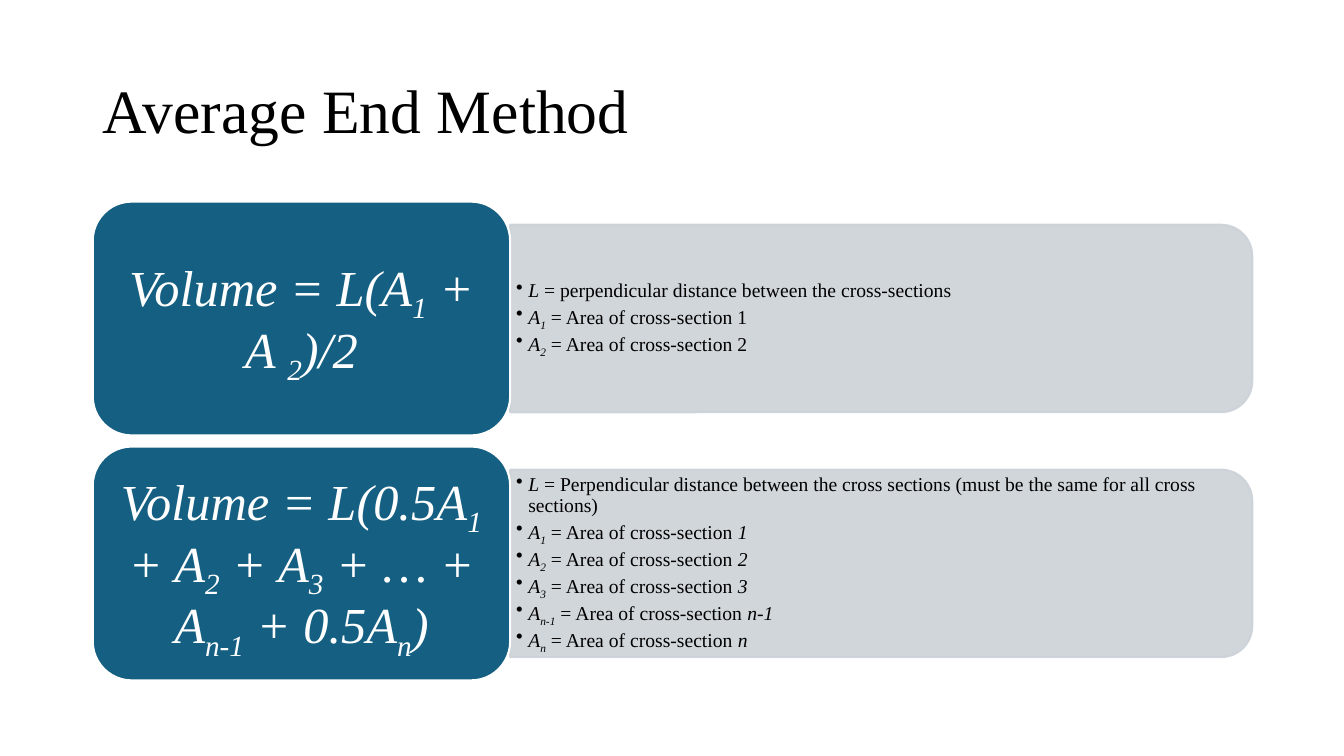
from lxml.etree import SubElement
from pptx import Presentation
from pptx.dml.color import RGBColor
from pptx.enum.shapes import MSO_SHAPE
from pptx.enum.text import MSO_ANCHOR, MSO_AUTO_SIZE, PP_ALIGN
from pptx.oxml.ns import qn
from pptx.util import Inches, Pt

COLORS = {"text": "000000", "card": "156082", "panel": "CCD2D8", "white": "FFFFFF"}
FONT = "Times New Roman"

# Each row: formula, then (symbol, meaning, italic ending); _..._ marks a subscript
AREA = " = Area of cross-section "
ROWS = [
    ("Volume = L(A_1_ + A _2_)/2",
     [("L", " = perpendicular distance between the cross-sections", ""),
      ("A_1_", AREA + "1", ""),
      ("A_2_", AREA + "2", "")]),
    ("Volume = L(0.5A_1_ + A_2_ + A_3_ + … + A_n-1_ + 0.5A_n_)",
     [("L", " = Perpendicular distance between the cross sections "
            "(must be the same for all cross sections)", "")]
     + [(f"A_{n}_", AREA, n) for n in ("1", "2", "3", "n-1", "n")]),
]

# Row geometry in inches
LEFT, TOP, PITCH = 0.92, 2, 2.43
CARD_W, CARD_H = 4.14, 2.32
PANEL_W, PANEL_H = 7.36, 1.86
LIST_W, LIST_H = 7.27, 1.68


class SlideBuilder:
    def __init__(self, prs):
        self.slide = prs.slides.add_slide(prs.slide_layouts[5])

    def add_runs(self, p, text, size, color, italic=False):
        for i, part in enumerate(text.split("_")):
            if not part:
                continue
            r = p.add_run()
            r.text = part
            r.font.name, r.font.size, r.font.italic = FONT, Pt(size), italic
            r.font.color.rgb = RGBColor.from_string(COLORS[color])
            if i % 2:
                r.font._element.set("baseline", "-25000")

    def space(self, p, after):
        """Set tight lines and a gap after, in percent of the text size."""
        p.line_spacing = 0.9
        pPr = p._p.get_or_add_pPr()
        gap = SubElement(pPr, qn("a:spcAft"))
        SubElement(gap, qn("a:spcPct")).set("val", str(after * 1000))
        return pPr

    def frame(self, sp, side, end):
        tf = sp.text_frame
        tf.word_wrap, tf.auto_size = True, MSO_AUTO_SIZE.NONE
        tf.vertical_anchor = MSO_ANCHOR.MIDDLE
        tf.margin_left = tf.margin_right = Inches(side)
        tf.margin_top = tf.margin_bottom = Inches(end)
        return tf

    def shape(self, kind, x, y, w, h, fill, line):
        sp = self.slide.shapes.add_shape(kind, Inches(x), Inches(y), Inches(w), Inches(h))
        sp.shadow.inherit = False
        sp.fill.solid()
        sp.fill.fore_color.rgb = RGBColor.from_string(COLORS[fill])
        sp.line.color.rgb = RGBColor.from_string(COLORS[line])
        sp.line.width = Pt(1.5)
        return sp

    def title(self, text):
        sp = self.slide.shapes.title
        sp.left, sp.top, sp.width, sp.height = map(Inches, (0.92, 0.4, 11.5, 1.45))
        p = self.frame(sp, 0.1, 0.05).paragraphs[0]
        p.alignment, p.line_spacing = PP_ALIGN.LEFT, 0.9
        self.add_runs(p, text, 44, "text")

    def panel(self, x, mid):
        # Turned a quarter, so the rounded corners face right
        sp = self.shape(MSO_SHAPE.ROUND_2_SAME_RECTANGLE, x + (PANEL_W - PANEL_H) / 2,
                        mid - PANEL_W / 2, PANEL_H, PANEL_W, "panel", "panel")
        sp.rotation = 90
        for clr in sp._element.spPr.iter(qn("a:srgbClr")):
            SubElement(clr, qn("a:alpha")).set("val", "90000")

    def definitions(self, x, mid, items):
        sp = self.slide.shapes.add_textbox(Inches(x), Inches(mid - LIST_H / 2),
                                           Inches(LIST_W), Inches(LIST_H))
        tf = self.frame(sp, 0.06, 0.03)
        for i, (symbol, meaning, ending) in enumerate(items):
            p = tf.add_paragraph() if i else tf.paragraphs[0]
            pPr = self.space(p, 15)
            pPr.set("marL", str(Inches(0.12)))
            pPr.set("indent", str(-Inches(0.12)))
            SubElement(pPr, qn("a:buChar")).set("char", "•")
            self.add_runs(p, symbol, 14, "text", True)
            self.add_runs(p, meaning, 14, "text")
            self.add_runs(p, ending, 14, "text", True)

    def card(self, x, mid, formula):
        sp = self.shape(MSO_SHAPE.ROUNDED_RECTANGLE, x, mid - CARD_H / 2,
                        CARD_W, CARD_H, "card", "white")
        p = self.frame(sp, 0.15, 0.07).paragraphs[0]
        p.alignment = PP_ALIGN.CENTER
        self.space(p, 35)
        self.add_runs(p, formula, 36, "white", True)


def main():
    prs = Presentation()
    prs.slide_width, prs.slide_height = Inches(13.33), Inches(7.5)
    s = SlideBuilder(prs)
    s.title("Average End Method")

    # One row per formula: panel, its definitions, then the card on top
    for i, (formula, items) in enumerate(ROWS):
        mid = TOP + CARD_H / 2 + i * PITCH
        s.panel(LEFT + CARD_W, mid)
        s.definitions(LEFT + CARD_W, mid, items)
        s.card(LEFT, mid, formula)

    prs.save("out.pptx")


if __name__ == "__main__":
    main()
